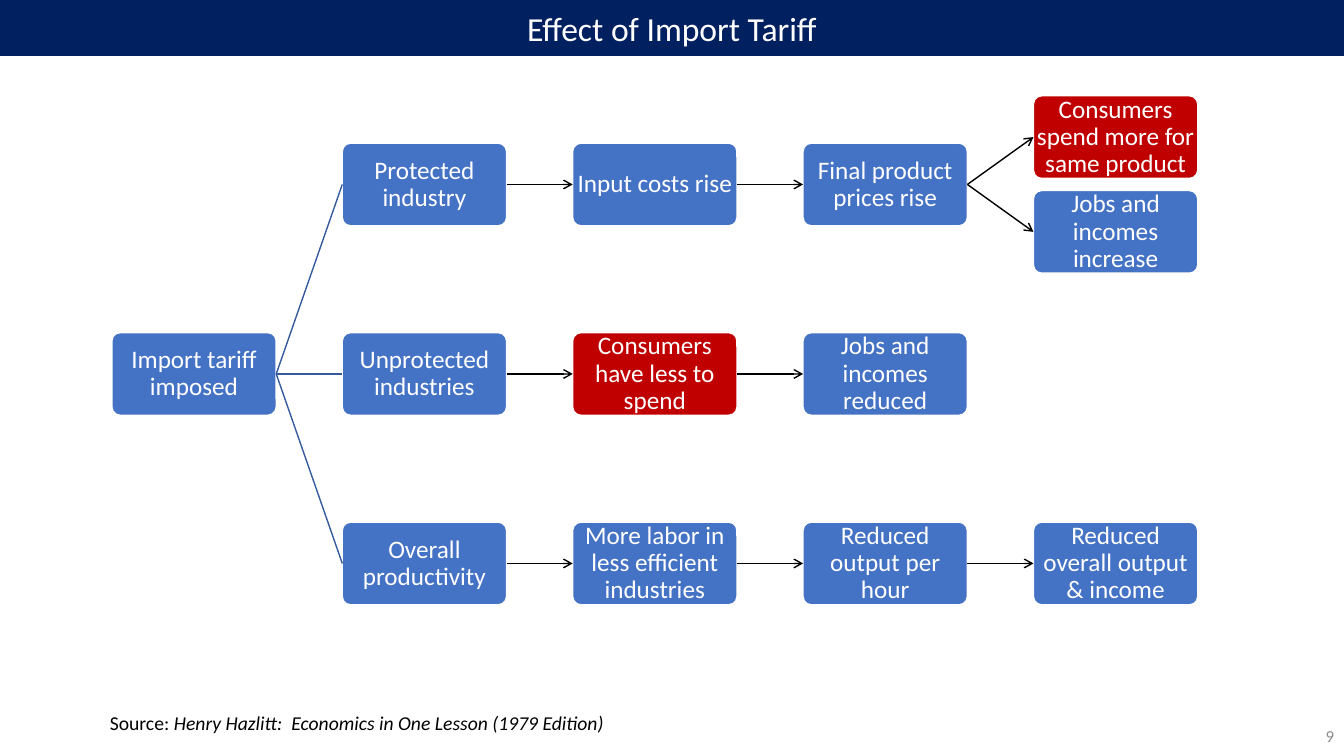
from pptx import Presentation
from pptx.dml.color import RGBColor
from pptx.enum.shapes import MSO_CONNECTOR, MSO_SHAPE
from pptx.enum.text import MSO_ANCHOR, PP_ALIGN
from pptx.oxml.ns import qn
from pptx.util import Inches, Pt
from lxml.etree import SubElement

BLUE, RED, NAVY, WHITE = "4472C4", "C00000", "002060", "FFFFFF"
BLACK, BRANCH, GRAY = "000000", "365B9D", "8C8C8C"
FIRST_LEFT, LAST_LEFT, FIRST_TOP, ROW_STEP = 1.11, 10.25, 0.95, 0.47
BOX_WIDTH, BOX_HEIGHT = 1.63, 0.82


def paint(color_format, hex_color):
    color_format.rgb = RGBColor.from_string(hex_color)


def style(paragraph, size, hex_color, align):
    paragraph.alignment = align
    paragraph.font.name = "Calibri"
    paragraph.font.size = Pt(size)
    paint(paragraph.font.color, hex_color)


prs = Presentation()
prs.slide_width, prs.slide_height = Inches(13.33), Inches(7.5)
slide = prs.slides.add_slide(prs.slide_layouts[5])

title = slide.shapes.title
title.left, title.top = Inches(0), Inches(0)
title.width, title.height = Inches(13.33), Inches(0.55)
title.fill.solid()
paint(title.fill.fore_color, NAVY)
paint(title.line.color, NAVY)
title.line.width = Pt(1)
title.text_frame.text = "Effect of Import Tariff"
title.text_frame.vertical_anchor = MSO_ANCHOR.MIDDLE
style(title.text_frame.paragraphs[0], 24, WHITE, PP_ALIGN.CENTER)

effects = [
    ("tariff", 0, 5, "Import tariff imposed", BLUE),
    ("protected", 1, 1, "Protected industry", BLUE),
    ("costs", 2, 1, "Input costs rise", BLUE),
    ("prices", 3, 1, "Final product prices rise", BLUE),
    ("spend more", 4, 0, "Consumers spend more for same product", RED),
    ("jobs up", 4, 2, "Jobs and incomes increase", BLUE),
    ("unprotected", 1, 5, "Unprotected industries", BLUE),
    ("spend less", 2, 5, "Consumers have less to spend", RED),
    ("jobs down", 3, 5, "Jobs and incomes reduced", BLUE),
    ("productivity", 1, 9, "Overall productivity", BLUE),
    ("labor", 2, 9, "More labor in less efficient industries", BLUE),
    ("hourly output", 3, 9, "Reduced output per hour", BLUE),
    ("total output", 4, 9, "Reduced overall output & income", BLUE),
]
boxes = {}
for key, column, row, wording, color in effects:
    box = slide.shapes.add_shape(
        MSO_SHAPE.ROUNDED_RECTANGLE,
        Inches(FIRST_LEFT + (LAST_LEFT - FIRST_LEFT) * column / 4),
        Inches(FIRST_TOP + ROW_STEP * row),
        Inches(BOX_WIDTH), Inches(BOX_HEIGHT))
    box.adjustments[0] = 0.1
    box.shadow.inherit = False
    box.fill.solid()
    paint(box.fill.fore_color, color)
    paint(box.line.color, WHITE)
    box.line.width = Pt(1)
    frame = box.text_frame
    frame.margin_left = frame.margin_right = Inches(0.01)
    frame.margin_top = frame.margin_bottom = Inches(0.01)
    frame.word_wrap = True
    frame.vertical_anchor = MSO_ANCHOR.MIDDLE
    frame.text = wording
    style(frame.paragraphs[0], 18, WHITE, PP_ALIGN.CENTER)
    frame.paragraphs[0].line_spacing = 0.9
    boxes[key] = box

links = [
    ("tariff", "protected"), ("tariff", "unprotected"), ("tariff", "productivity"),
    ("protected", "costs"), ("costs", "prices"),
    ("prices", "spend more"), ("prices", "jobs up"),
    ("unprotected", "spend less"), ("spend less", "jobs down"),
    ("productivity", "labor"), ("labor", "hourly output"),
    ("hourly output", "total output"),
]
for cause, effect in links:
    link = slide.shapes.add_connector(MSO_CONNECTOR.STRAIGHT, 0, 0, 0, 0)
    link.begin_connect(boxes[cause], 3)
    link.end_connect(boxes[effect], 1)
    link.line.width = Pt(1)
    paint(link.line.color, BRANCH if cause == "tariff" else BLACK)
    if cause != "tariff":
        SubElement(link.line._get_or_add_ln(), qn("a:tailEnd"), type="arrow")
    SubElement(link._element.spPr, qn("a:effectLst"))

source = slide.shapes.add_textbox(Inches(0.99), Inches(7), Inches(5.15), Inches(0.34))
source.text_frame.word_wrap = False
citation = source.text_frame.paragraphs[0]
citation.add_run().text = "Source: "
book = citation.add_run()
book.text = "Henry Hazlitt:  Economics in One Lesson (1979 Edition)"
book.font.italic = True
style(citation, 14, BLACK, PP_ALIGN.LEFT)

page_number = slide.shapes.add_textbox(Inches(10.33), Inches(7.1), Inches(3), Inches(0.4))
page_number.text_frame.word_wrap = True
page_number.text_frame.vertical_anchor = MSO_ANCHOR.MIDDLE
page_number.text_frame.text = "9"
style(page_number.text_frame.paragraphs[0], 12, GRAY, PP_ALIGN.RIGHT)

prs.save("out.pptx")
